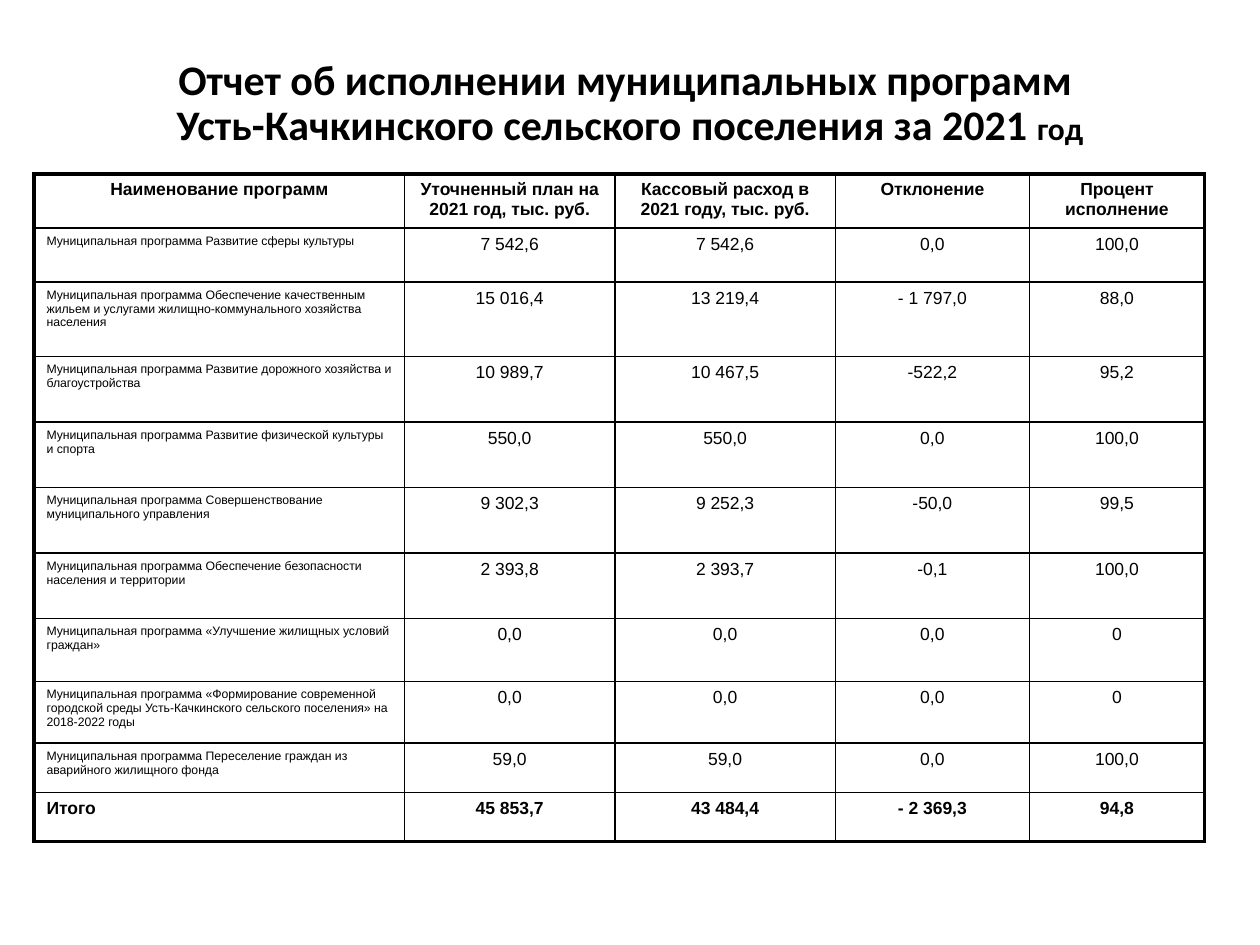
from lxml.etree import SubElement
from pptx import Presentation
from pptx.dml.color import RGBColor
from pptx.enum.text import MSO_ANCHOR as Anchor, PP_ALIGN as Align
from pptx.oxml.ns import qn
from pptx.util import Inches, Pt

COLORS = {"text": "000000", "border": "000000", "page": "FFFFFF"}
THIN, THICK = 1, 2.25
COLUMN_WIDTHS = [2.94, 1.67, 1.75, 1.54, 1.39]
ROW_HEIGHTS = [0.43, 0.43, 0.59, 0.52, 0.52, 0.52, 0.52, 0.5, 0.49, 0.39, 0.39]
TITLE_RUNS = [
    ("Отчет об исполнении муниципальных программ \vУсть-Качкинского сельского поселения за 2021 ", 24),
    ("год", 18),
]
HEADER = ["Наименование программ", "Уточненный план на 2021 год, тыс. руб.",
          "Кассовый расход в 2021 году, тыс. руб.", "Отклонение", "Процент исполнение"]
PROGRAMS = [
    ("Развитие сферы культуры", "7 542,6", "7 542,6", "0,0", "100,0"),
    ("Обеспечение качественным жильем и услугами жилищно-коммунального хозяйства населения",
     "15 016,4", "13 219,4", "- 1 797,0", "88,0"),
    ("Развитие дорожного хозяйства и благоустройства", "10 989,7", "10 467,5", "-522,2", "95,2"),
    ("Развитие физической культуры и спорта", "550,0", "550,0", "0,0", "100,0"),
    ("Совершенствование муниципального управления", "9 302,3", "9 252,3", "-50,0", "99,5"),
    ("Обеспечение безопасности населения и территории", "2 393,8", "2 393,7", "-0,1", "100,0"),
    ("«Улучшение жилищных условий граждан»", "0,0", "0,0", "0,0", "0"),
    ("«Формирование современной городской среды Усть-Качкинского сельского поселения» на 2018-2022 годы",
     "0,0", "0,0", "0,0", "0"),
    ("Переселение граждан из аварийного жилищного фонда", "59,0", "59,0", "0,0", "100,0"),
]
TOTAL = ["Итого", "45 853,7", "43 484,4", "- 2 369,3", "94,8"]


def set_font(font, **values):
    """Apply format values and the text colour to a font."""
    for name, value in values.items():
        setattr(font, name, value)
    font.color.rgb = RGBColor.from_string(COLORS["text"])


def set_borders(cell, widths):
    """Draw the cell's border lines with widths in points keyed by side."""
    properties = cell._tc.get_or_add_tcPr()
    for side, width in widths.items():
        line = SubElement(properties, qn(f"a:ln{side}"), w=str(Pt(width)))
        fill = SubElement(line, qn("a:solidFill"))
        SubElement(fill, qn("a:srgbClr"), val=COLORS["border"])


def fill_cell(cell, text, size, bold, align):
    """Write one formatted paragraph in a cell on a page-coloured fill."""
    cell.fill.solid()
    cell.fill.fore_color.rgb = RGBColor.from_string(COLORS["page"])
    paragraph = cell.text_frame.paragraphs[0]
    paragraph.alignment = align
    paragraph.space_before = Pt(size * 0.2)
    run = paragraph.add_run()
    run.text = text
    set_font(run.font, name="Arial", size=Pt(size), bold=bold)


def place_title(slide, left, top, width, height):
    """Place and format the slide title."""
    title = slide.shapes.title
    box = {"left": left, "top": top, "width": width, "height": height}
    for name, value in box.items():
        setattr(title, name, Inches(value))
    frame = title.text_frame
    frame.word_wrap = True
    frame.vertical_anchor = Anchor.MIDDLE
    paragraph = frame.paragraphs[0]
    paragraph.alignment = Align.CENTER
    paragraph.line_spacing = 0.9
    for text, size in TITLE_RUNS:
        first, *rest = text.split("\v")
        for index, part in enumerate([first, *rest]):
            if index:
                paragraph.add_line_break()
            run = paragraph.add_run()
            run.text = part
            set_font(run.font, name="Calibri", size=Pt(size), bold=True)


def place_report(slide, left, top):
    """Place the table of programme spending with a thick outer frame."""
    programs = [[f"Муниципальная программа {name}", *values] for name, *values in PROGRAMS]
    rows = [HEADER, *programs, TOTAL]
    last_row, last_column = len(rows) - 1, len(HEADER) - 1
    table = slide.shapes.add_table(
        len(rows), len(HEADER), Inches(left), Inches(top),
        Inches(sum(COLUMN_WIDTHS)), Inches(sum(ROW_HEIGHTS))).table
    table.first_row = table.horz_banding = False
    for column, width in zip(table.columns, COLUMN_WIDTHS):
        column.width = Inches(width)
    for row, height in zip(table.rows, ROW_HEIGHTS):
        row.height = Inches(height)
    for r, values in enumerate(rows):
        bold = r in (0, last_row)
        for c, text in enumerate(values):
            cell = table.cell(r, c)
            set_borders(cell, {
                "L": THICK if c == 0 else THIN,
                "R": THICK if c == last_column else THIN,
                "T": THICK if r == 0 else THIN,
                "B": THICK if r == last_row else THIN,
            })
            size = 7 if c == 0 and not bold else 10
            align = Align.LEFT if c == 0 and r > 0 else Align.CENTER
            fill_cell(cell, text, size, bold, align)


def main():
    """Build and save the programme report slide."""
    deck = Presentation()
    deck.slide_width, deck.slide_height = Inches(10), Inches(7.5)
    slide = deck.slides.add_slide(deck.slide_layouts[5])
    place_title(slide, 0.5, 0.28, 9, 1.1)
    place_report(slide, 0.27, 1.38)
    deck.save("out.pptx")


if __name__ == "__main__":
    main()
